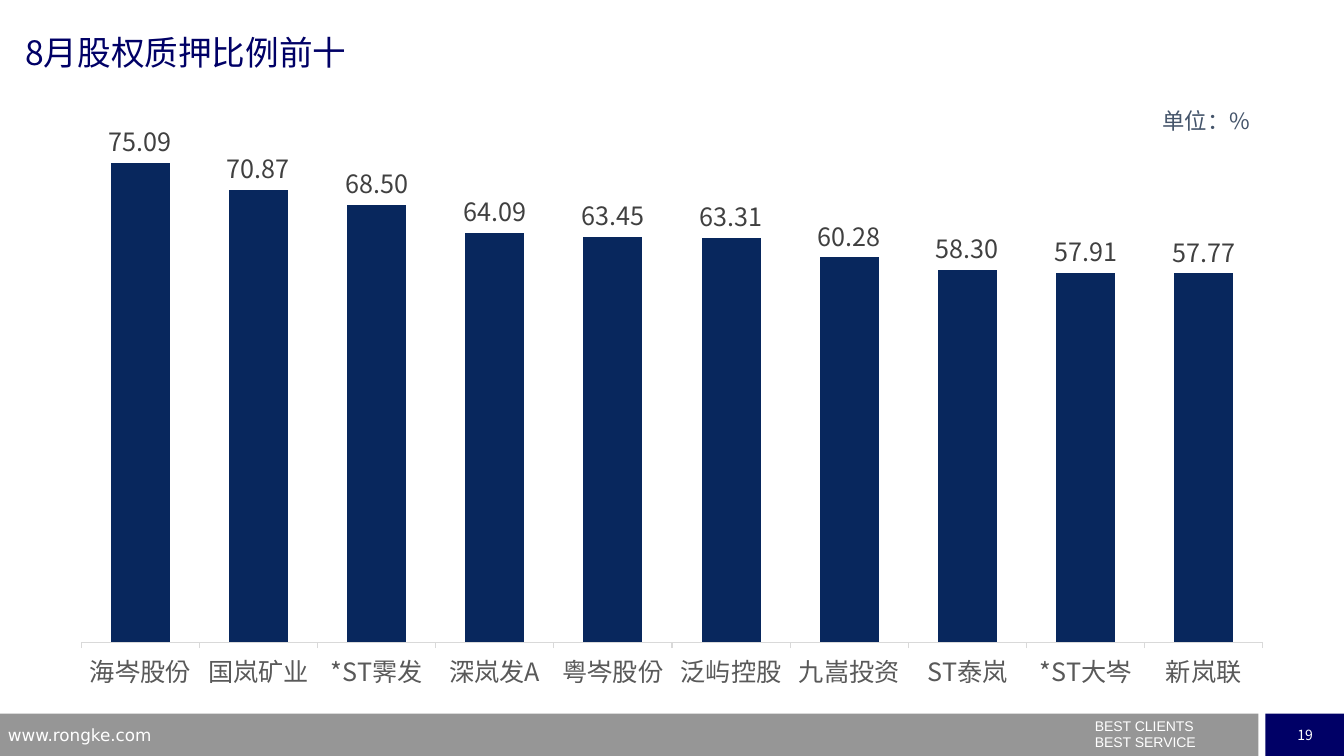
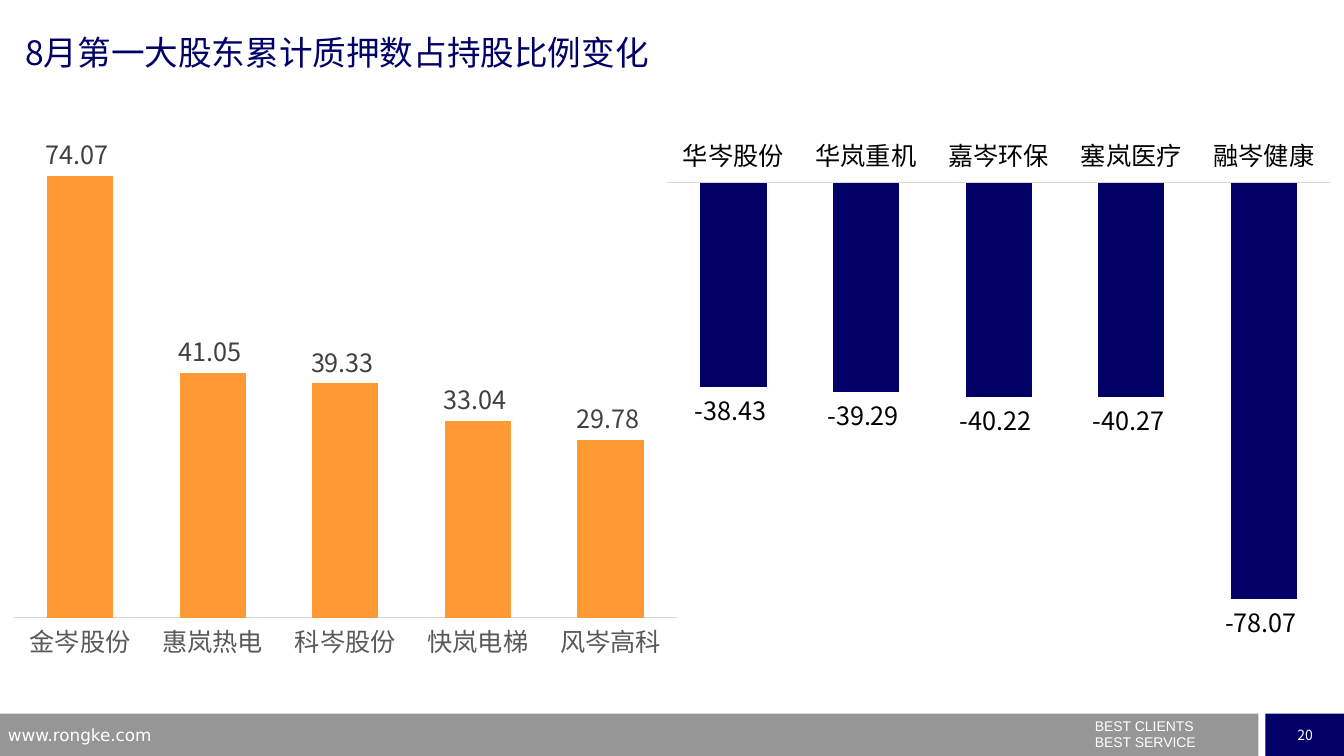
from lxml import etree
from pptx import Presentation
from pptx.chart.data import CategoryChartData
from pptx.dml.color import RGBColor
from pptx.enum.chart import XL_CHART_TYPE as ChartType
from pptx.enum.chart import XL_LABEL_POSITION as LabelPos
from pptx.enum.chart import XL_TICK_LABEL_POSITION as TickLabel
from pptx.enum.chart import XL_TICK_MARK as Tick
from pptx.enum.shapes import MSO_SHAPE as Shape
from pptx.enum.text import MSO_ANCHOR as Anchor
from pptx.enum.text import PP_ALIGN as Align
from pptx.oxml import parse_xml
from pptx.oxml.ns import nsdecls, qn
from pptx.util import Inches, Pt

NAVY = RGBColor(0x00, 0x00, 0x66)
DEEP_BLUE = RGBColor(0x08, 0x27, 0x5D)
ORANGE = RGBColor(0xFF, 0x99, 0x33)
GREY = RGBColor(0x96, 0x96, 0x96)
PALE = RGBColor(0xD9, 0xD9, 0xD9)
SLATE = RGBColor(0x44, 0x54, 0x6A)
AXIS_TEXT = RGBColor(0x59, 0x59, 0x59)
LABEL_TEXT = RGBColor(0x40, 0x40, 0x40)
BLACK = RGBColor(0x00, 0x00, 0x00)
WHITE = RGBColor(0xFF, 0xFF, 0xFF)

CJK_SC = "Noto Sans CJK SC"
CJK_JP = "Noto Sans CJK JP"
SIZE = (13.33, 7.5)
BAND_TOP, BAND_HEIGHT = 7.08, 0.42


def set_east_asian(root):
    """Give Chinese characters the same typeface as the Latin ones."""
    for latin in root.iter(qn("a:latin")):
        ea = etree.Element(qn("a:ea"), typeface=latin.get("typeface"))
        latin.addnext(ea)


def style_font(font, size, color, name=CJK_SC):
    font.size = Pt(size)
    font.name = name
    font.color.rgb = color


class Deck:
    def __init__(self):
        self.prs = Presentation()
        self.prs.slide_width, self.prs.slide_height = map(Inches, SIZE)
        self.s = None

    def add_slide(self, title, number):
        self.s = self.prs.slides.add_slide(self.prs.slide_layouts[6])
        self.footer(number)
        self.text((0.25, 0.32, 9, 0.42), title, 24, NAVY, inset=0)

    def band(self, left, width, color):
        sp = self.s.shapes.add_shape(
            Shape.RECTANGLE,
            *map(Inches, (left, BAND_TOP, width, BAND_HEIGHT)))
        sp.shadow.inherit = False
        sp.fill.solid()
        sp.fill.fore_color.rgb = color
        sp.line.fill.background()
        return sp

    def footer(self, number):
        self.band(0, 12.48, GREY)
        tf = self.band(12.55, 0.79, NAVY).text_frame
        tf.word_wrap = False
        tf.vertical_anchor = Anchor.MIDDLE
        self.fill_text(tf, str(number), 10, WHITE, align=Align.CENTER)
        tf = self.text((10.76, 7.14, 2.56, 0.36),
                       "BEST CLIENTS\nBEST SERVICE", 10, WHITE, "Arial")
        for p in tf.paragraphs:
            p.line_spacing = 0.5
        tf.paragraphs[1].space_before = Pt(5.5)
        self.text((-0.02, 7.14, 3.22, 0.26), "www.rongke.com", 12, WHITE,
                  "DejaVu Sans")

    def fill_text(self, tf, text, size, color, name=CJK_SC, align=None):
        tf.text = text
        for p in tf.paragraphs:
            p.alignment = align
            for r in p.runs:
                style_font(r.font, size, color, name)

    def text(self, box, text, size, color, name=CJK_SC, align=None,
             inset=None):
        tf = self.s.shapes.add_textbox(*map(Inches, box)).text_frame
        tf.word_wrap = True
        if inset is not None:
            tf.margin_left = tf.margin_right = Inches(inset)
            tf.margin_top = tf.margin_bottom = Inches(inset)
        self.fill_text(tf, text, size, color, name, align)
        return tf

    def columns(self, box, values, color, limits, fmt, name=CJK_SC,
                axis_color=AXIS_TEXT, label_color=LABEL_TEXT,
                tick=Tick.NONE, tick_label=TickLabel.NEXT_TO_AXIS,
                layout=None):
        """Column chart of a name-to-value dict; limits are the axis ends."""
        data = CategoryChartData(number_format=fmt)
        data.categories = list(values)
        data.add_series("Series 1", list(values.values()))
        chart = self.s.shapes.add_chart(
            ChartType.COLUMN_CLUSTERED, *map(Inches, box), data).chart
        chart.has_legend = chart.has_title = False
        style_font(chart.font, 18, BLACK, name)

        plot = chart.plots[0]
        plot.gap_width, plot.overlap = 100, -27
        plot.vary_by_categories = False
        series = plot.series[0]
        series.invert_if_negative = False
        series.format.fill.solid()
        series.format.fill.fore_color.rgb = color

        labels = series.data_labels
        labels.show_value = True
        labels.position = LabelPos.OUTSIDE_END
        labels.number_format, labels.number_format_is_linked = fmt, False
        style_font(labels.font, 18, label_color, name)

        axis = chart.category_axis
        axis.major_tick_mark, axis.minor_tick_mark = tick, Tick.NONE
        axis.tick_label_position = tick_label
        axis.format.line.color.rgb = PALE
        axis.format.line.width = Pt(0.75)
        style_font(axis.tick_labels.font, 18, axis_color, name)

        axis = chart.value_axis
        axis.minimum_scale, axis.maximum_scale = limits
        axis.has_major_gridlines = False
        axis.visible = False
        if layout:
            self.place_plot(chart, layout)
        set_east_asian(chart.element)

    def place_plot(self, chart, layout):
        """Fix the inner plot area as fractions of the chart: x, y, w, h."""
        area = chart.element.find(".//" + qn("c:plotArea"))
        for old in area.findall(qn("c:layout")):
            area.remove(old)
        modes = '<c:xMode val="edge"/><c:yMode val="edge"/>'
        sizes = "".join(f'<c:{key} val="{v}"/>'
                        for key, v in zip("xywh", layout))
        area.insert(0, parse_xml(
            f'<c:layout {nsdecls("c")}><c:manualLayout>'
            f'<c:layoutTarget val="inner"/>{modes}{sizes}'
            '</c:manualLayout></c:layout>'))

    def save(self):
        for s in self.prs.slides:
            set_east_asian(s.element)
        self.prs.save("out.pptx")


def main():
    deck = Deck()

    deck.add_slide("8月股权质押比例前十", 19)
    deck.columns(
        (0.8, 1.07, 11.73, 5.89),
        {"海岑股份": 75.09, "国岚矿业": 70.87, "*ST霁发": 68.50,
         "深岚发A": 64.09, "粤岑股份": 63.45, "泛屿控股": 63.31,
         "九嵩投资": 60.28, "ST泰岚": 58.30, "*ST大岑": 57.91,
         "新岚联": 57.77},
        DEEP_BLUE, (0, 80), "#,##0.00", CJK_JP, tick=Tick.OUTSIDE,
        layout=(0, 0.04, 1, 0.86))
    deck.text((11.53, 1.06, 1, 0.27), "单位：%", 16, SLATE,
              align=Align.JUSTIFY, inset=0)

    deck.add_slide("8月第一大股东累计质押数占持股比例变化", 20)
    deck.columns(
        (0, 1.29, 6.85, 5.35),
        {"金岑股份": 74.07, "惠岚热电": 41.05, "科岑股份": 39.33,
         "快岚电梯": 33.04, "风岑高科": 29.78},
        ORANGE, (0, 80), "#,##0.00_ ")
    deck.columns(
        (6.48, 1.24, 6.85, 5.44),
        {"华岑股份": -38.43, "华岚重机": -39.29, "嘉岑环保": -40.22,
         "塞岚医疗": -40.27, "融岑健康": -78.07},
        NAVY, (-90, 0), "0.00_ ", axis_color=BLACK, label_color=BLACK,
        tick_label=TickLabel.HIGH)

    deck.save()


if __name__ == "__main__":
    main()
